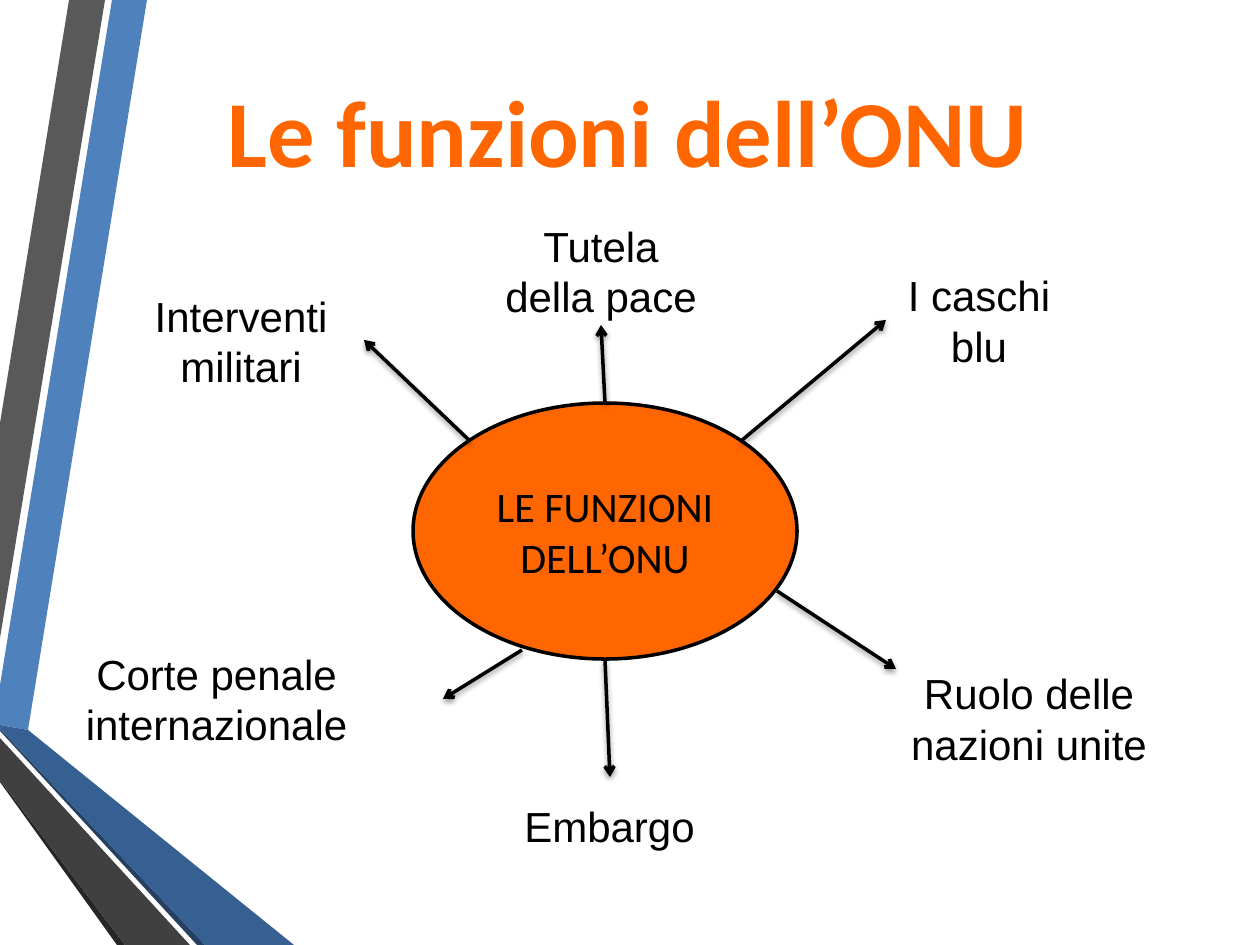
from lxml import etree
from pptx import Presentation
from pptx import util as u
from pptx.dml.color import RGBColor
from pptx.enum import shapes, text
from pptx.oxml import parse_xml
from pptx.oxml.ns import nsdecls, qn

SCALE = 914400 / 126
ORANGE, BLACK = "FF6600", "000000"

BANDS = [
    ("4F81BD", [(0, 685), (0, 725), (28, 730), (147, 0), (112, 0)]),
    ("595959", [(105, 0), (69, 0), (0, 423), (0, 638)]),
    ("262626", [(0, 780), (0, 782), (117, 945), (125, 945)]),
    ("254061", [(0, 729), (0, 731), (197, 945), (205, 945)]),
    ("376092", [(0, 729), (205, 945), (294, 945), (28, 730), (0, 725)]),
    ("404040", [(0, 780), (125, 945), (190, 945), (0, 738)]),
]

FUNCTIONS = [
    ("Interventi militari", (118, 276, 246, 129), (470, 441), (364, 340)),
    ("Tutela della pace", (483, 227, 236, 88), (605, 403), (601, 325)),
    ("I caschi blu", (886, 266, 186, 108), (741, 441), (886, 320)),
    ("Corte penale internazionale", (69, 630, 295, 137), (522, 650), (443, 699)),
    ("Embargo", (501, 777, 217, 98), (605, 660), (610, 777)),
    ("Ruolo delle nazioni unite", (886, 659, 286, 118), (777, 591), (896, 669)),
]

SHADOW = (
    f'<a:effectLst {nsdecls("a")}><a:outerShdw blurRad="40000" dist="20000" '
    'dir="5400000" rotWithShape="0"><a:srgbClr val="000000">'
    '<a:alpha val="38000"/></a:srgbClr></a:outerShdw></a:effectLst>'
)


def px(*lengths):
    """Turn pixel lengths into EMU."""
    return [u.Emu(round(length * SCALE)) for length in lengths]


def colour(hex_value):
    """Return the colour for a hex string."""
    return RGBColor.from_string(hex_value)


def write(shape, wording, size, font, ink, bold=False):
    """Write centred, wrapped text in a shape."""
    frame = shape.text_frame
    frame.text = wording
    frame.word_wrap = True
    frame.auto_size = text.MSO_AUTO_SIZE.NONE
    frame.vertical_anchor = text.MSO_ANCHOR.MIDDLE
    paragraph = frame.paragraphs[0]
    paragraph.alignment = text.PP_ALIGN.CENTER
    for run in paragraph.runs:
        run.font.size = u.Pt(size)
        run.font.name = font
        run.font.bold = bold
        run.font.color.rgb = colour(ink)


def add_title(slide, wording):
    """Place and format the slide title."""
    title = slide.shapes.title
    title.left, title.top, title.width, title.height = px(59, 63, 1138, 134)
    write(title, wording, 54, "Calibri", ORANGE, bold=True)


def add_band(slide, fill, corners):
    """Draw one decorative band along the left edge."""
    builder = slide.shapes.build_freeform(*corners[0], scale=SCALE)
    builder.add_line_segments(corners[1:], close=True)
    band = builder.convert_to_shape()
    band.shadow.inherit = False
    band.fill.solid()
    band.fill.fore_color.rgb = colour(fill)
    band.line.fill.background()


def add_hub(slide, wording):
    """Draw the central ellipse."""
    hub = slide.shapes.add_shape(shapes.MSO_SHAPE.OVAL, *px(413, 403, 384, 256))
    hub.shadow.inherit = False
    hub.fill.solid()
    hub.fill.fore_color.rgb = colour(ORANGE)
    hub.line.color.rgb = colour(BLACK)
    hub.line.width = u.Pt(2)
    write(hub, wording, 24, "Calibri", BLACK)


def add_arrow(slide, start, end):
    """Draw a shadowed arrow from the hub towards a label."""
    arrow = slide.shapes.add_connector(
        shapes.MSO_CONNECTOR.STRAIGHT, *px(*start, *end))
    arrow.line.color.rgb = colour(BLACK)
    arrow.line.width = u.Pt(2)
    etree.SubElement(arrow.line._get_or_add_ln(), qn("a:tailEnd"), type="arrow")
    arrow._element.spPr.append(parse_xml(SHADOW))


def add_label(slide, wording, box):
    """Add the name of one function."""
    label = slide.shapes.add_textbox(*px(*box))
    write(label, wording, 24, "Arial", BLACK)


def main():
    """Build and save the slide."""
    deck = Presentation()
    deck.slide_width, deck.slide_height = px(1260, 945)
    slide = deck.slides.add_slide(deck.slide_layouts[5])
    for fill, corners in BANDS:
        add_band(slide, fill, corners)
    add_title(slide, "Le funzioni dell’ONU")
    add_hub(slide, "LE FUNZIONI DELL’ONU")
    for wording, box, start, end in FUNCTIONS:
        add_arrow(slide, start, end)
        add_label(slide, wording, box)
    deck.save("out.pptx")


if __name__ == "__main__":
    main()
